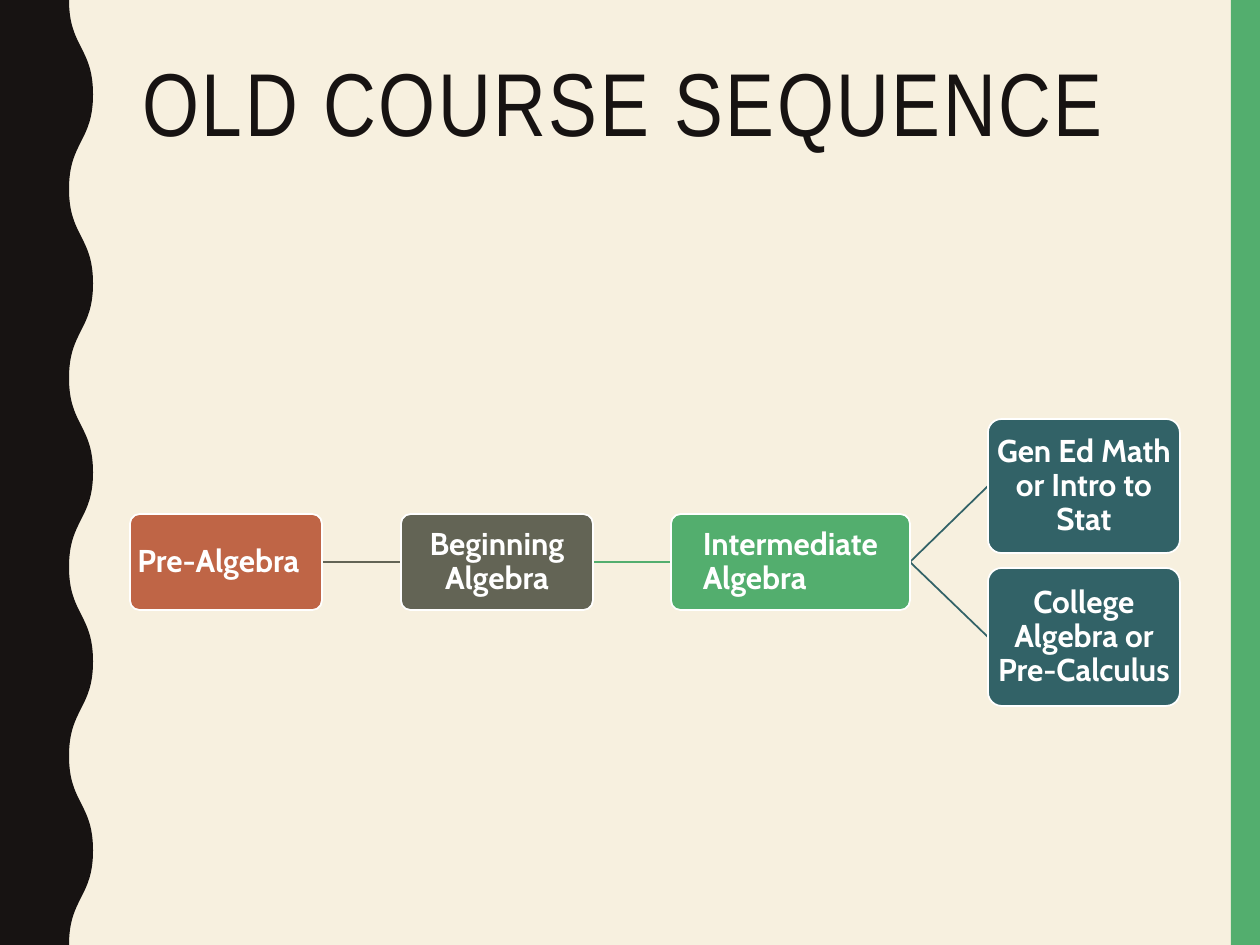
"""Build the old course sequence slide as a branching flow of course boxes."""

from dataclasses import dataclass

import lxml.etree
import pptx
import pptx.dml.color
import pptx.enum.shapes
import pptx.enum.text
import pptx.oxml.ns
import pptx.shapes.autoshape
import pptx.slide
import pptx.text.text
import pptx.util

EMU_PER_PX = 914400 / 126
SLIDE_WIDTH, SLIDE_HEIGHT = 1260, 945
Align = pptx.enum.text.PP_ALIGN
Anchor = pptx.enum.text.MSO_ANCHOR
Preset = pptx.enum.shapes.MSO_SHAPE


@dataclass(frozen=True)
class Theme:
    background: str = "F7F0DF"
    ink: str = "171312"
    white: str = "FFFFFF"
    rust: str = "BF6546"
    olive: str = "636455"
    green: str = "53AE6E"
    teal: str = "326267"
    title_font: str = "Arial Narrow"
    course_font: str = "Cabin"
    title_size: int = 51
    course_size: int = 18
    line_width: int = 1
    line_spacing: float = 0.9


@dataclass(frozen=True)
class Course:
    name: str
    left: int
    top: int
    width: int
    height: int
    color: str
    align: Align = Align.CENTER
    inset_left: int = 1
    inset_right: int = 1

    @property
    def middle(self) -> int:
        return self.top + self.height // 2


THEME = Theme()
ROW_TOP, ROW_HEIGHT, COURSE_WIDTH = 514, 96, 192
PRE_ALGEBRA = Course("Pre-Algebra", 130, ROW_TOP, COURSE_WIDTH, ROW_HEIGHT,
                     THEME.rust, inset_right=16)
BEGINNING = Course("Beginning Algebra", 401, ROW_TOP, COURSE_WIDTH, ROW_HEIGHT, THEME.olive)
INTERMEDIATE = Course("Intermediate Algebra", 671, ROW_TOP, 239, ROW_HEIGHT,
                      THEME.green, Align.LEFT, inset_left=29)
GENERAL = Course("Gen Ed Math or Intro to Stat", 988, 419, COURSE_WIDTH, 134, THEME.teal)
COLLEGE = Course("College Algebra or Pre-Calculus", 988, 568, COURSE_WIDTH, 138, THEME.teal)
COURSES = (PRE_ALGEBRA, BEGINNING, INTERMEDIATE, GENERAL, COLLEGE)
LINKS = (
    (PRE_ALGEBRA, BEGINNING),
    (BEGINNING, INTERMEDIATE),
    (INTERMEDIATE, GENERAL),
    (INTERMEDIATE, COLLEGE),
)


def px(length: float) -> pptx.util.Emu:
    return pptx.util.Emu(round(length * EMU_PER_PX))


def rgb(color: str) -> pptx.dml.color.RGBColor:
    return pptx.dml.color.RGBColor.from_string(color)


def paint(shape: pptx.shapes.autoshape.Shape, color: str) -> None:
    shape.shadow.inherit = False
    shape.fill.solid()
    shape.fill.fore_color.rgb = rgb(color)
    shape.line.fill.background()


def format_text(paragraph: pptx.text.text._Paragraph, font_name: str,
                size: int, color: str, bold: bool) -> None:
    paragraph.line_spacing = THEME.line_spacing
    for run in paragraph.runs:
        run.font.name = font_name
        run.font.size = pptx.util.Pt(size)
        run.font.bold = bold
        run.font.color.rgb = rgb(color)


def draw_side_band(slide: pptx.slide.Slide) -> None:
    width = 29
    band = slide.shapes.add_shape(Preset.RECTANGLE, px(SLIDE_WIDTH - width), 0,
                                  px(width), px(SLIDE_HEIGHT))
    paint(band, THEME.green)


def draw_wave(slide: pptx.slide.Slide) -> None:
    trough, crest, bends = 69, 93, 10
    bend_height = SLIDE_HEIGHT / bends
    knots = [(px(crest if bend % 2 else trough), px(bend * bend_height))
             for bend in range(bends + 1)]
    builder = slide.shapes.build_freeform(*knots[0])
    builder.add_line_segments(knots[1:] + [(0, px(SLIDE_HEIGHT)), (0, 0)], close=True)
    wave = builder.convert_to_shape()
    paint(wave, THEME.ink)
    segments = list(wave._element.iter(pptx.oxml.ns.qn("a:lnTo")))
    for segment, start, end in zip(segments, knots, knots[1:]):
        middle = (start[1] + end[1]) // 2
        curve = lxml.etree.Element(pptx.oxml.ns.qn("a:cubicBezTo"))
        for x, y in ((start[0], middle), (end[0], middle), end):
            lxml.etree.SubElement(curve, pptx.oxml.ns.qn("a:pt"), x=str(x), y=str(y))
        segment.getparent().replace(segment, curve)


def draw_title(slide: pptx.slide.Slide, title: str) -> None:
    box = slide.shapes.add_textbox(px(130), px(53), px(1052), px(205))
    text_frame = box.text_frame
    text_frame.word_wrap = True
    text_frame.text = title
    paragraph = text_frame.paragraphs[0]
    format_text(paragraph, THEME.title_font, THEME.title_size, THEME.ink, False)
    paragraph.runs[0].font._element.set("spc", "150")


def draw_link(slide: pptx.slide.Slide, source: Course, target: Course) -> None:
    connector = slide.shapes.add_connector(
        pptx.enum.shapes.MSO_CONNECTOR.STRAIGHT,
        px(source.left + source.width), px(source.middle),
        px(target.left), px(target.middle))
    connector.line.color.rgb = rgb(target.color)
    connector.line.width = pptx.util.Pt(THEME.line_width)
    properties = connector._element.spPr
    lxml.etree.SubElement(properties, pptx.oxml.ns.qn("a:effectLst"))


def draw_course(slide: pptx.slide.Slide, course: Course) -> None:
    shape = slide.shapes.add_shape(Preset.ROUNDED_RECTANGLE, px(course.left), px(course.top),
                                   px(course.width), px(course.height))
    shape.adjustments[0] = 0.1
    paint(shape, course.color)
    shape.line.color.rgb = rgb(THEME.white)
    shape.line.width = pptx.util.Pt(THEME.line_width)
    text_frame = shape.text_frame
    text_frame.word_wrap = True
    text_frame.vertical_anchor = Anchor.MIDDLE
    text_frame.margin_left = px(course.inset_left)
    text_frame.margin_right = px(course.inset_right)
    text_frame.margin_top = text_frame.margin_bottom = px(1)
    text_frame.text = course.name
    paragraph = text_frame.paragraphs[0]
    paragraph.alignment = course.align
    format_text(paragraph, THEME.course_font, THEME.course_size, THEME.white, True)


def main() -> None:
    presentation = pptx.Presentation()
    presentation.slide_width = px(SLIDE_WIDTH)
    presentation.slide_height = px(SLIDE_HEIGHT)
    slide = presentation.slides.add_slide(presentation.slide_layouts[6])
    slide.background.fill.solid()
    slide.background.fill.fore_color.rgb = rgb(THEME.background)
    draw_side_band(slide)
    draw_wave(slide)
    draw_title(slide, "OLD COURSE SEQUENCE")
    for source, target in LINKS:
        draw_link(slide, source, target)
    for course in COURSES:
        draw_course(slide, course)
    presentation.save("out.pptx")


if __name__ == "__main__":
    main()
